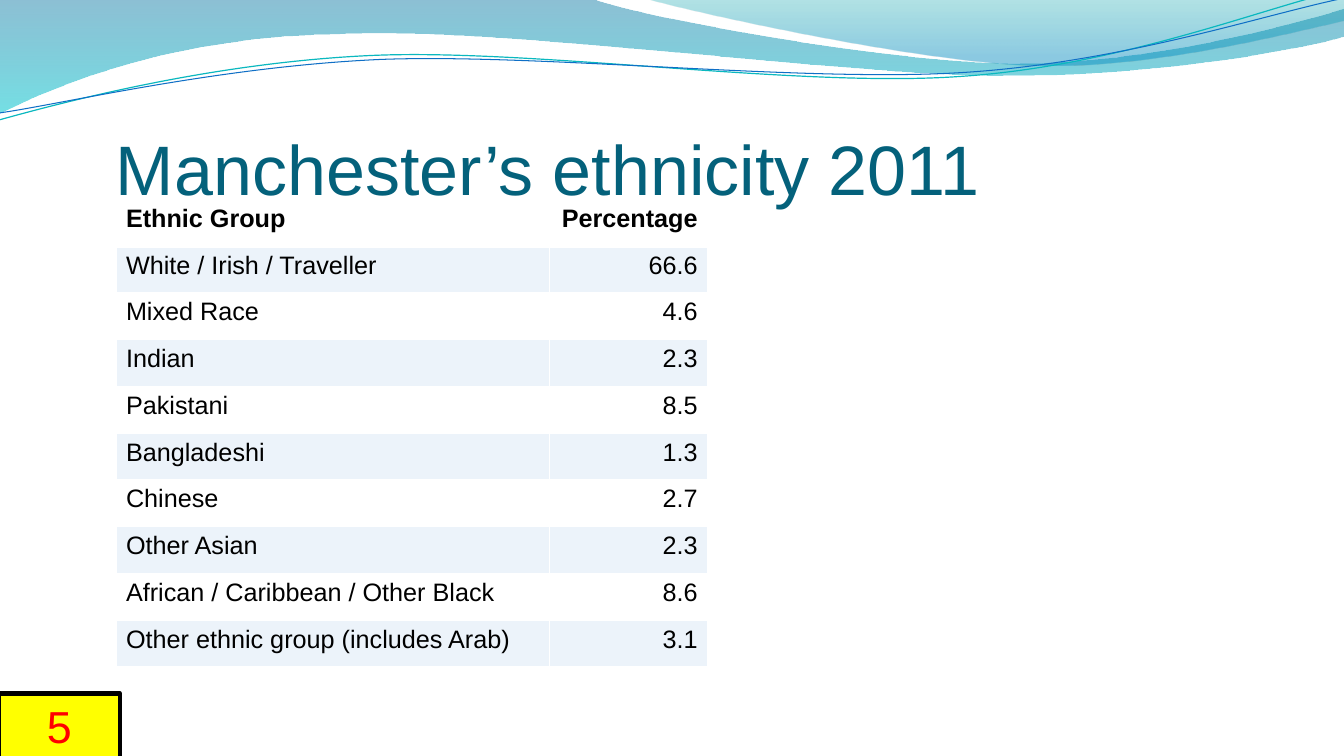
"""Build the slide on Manchester's ethnicity in 2011."""
from dataclasses import dataclass

from lxml.etree import SubElement
from pptx import Presentation
from pptx.dml.color import RGBColor
from pptx.enum.shapes import MSO_SHAPE as Shape
from pptx.enum.text import MSO_ANCHOR as Anchor, MSO_AUTO_SIZE as AutoSize, PP_ALIGN as Align
from pptx.oxml import parse_xml
from pptx.oxml.ns import nsdecls, qn
from pptx.util import Pt

PX = 9144
FONT = "Arial"
BLACK = RGBColor(0x00, 0x00, 0x00)
WHITE = RGBColor(0xFF, 0xFF, 0xFF)
RED = RGBColor(0xFF, 0x00, 0x00)
YELLOW = RGBColor(0xFF, 0xFF, 0x00)
TITLE_TEAL = RGBColor(0x04, 0x61, 0x7B)
BAND_BLUE = RGBColor(0x0F, 0x6F, 0xC6)
LINE_TEAL = RGBColor(0x0A, 0xB8, 0xBF)
DEEP_BLUE = RGBColor(0x00, 0x74, 0xA1)
TURQUOISE = RGBColor(0x00, 0xC6, 0xCF)
SEA_GREEN = RGBColor(0x00, 0xA1, 0xA9)
SKY_BLUE = RGBColor(0x00, 0x8B, 0xBF)

Point = tuple[int, int]


@dataclass(frozen=True)
class Stop:
    position: float
    color: RGBColor
    alpha: int


@dataclass(frozen=True)
class Wave:
    """A path whose segments hold one end point or three cubic curve points."""
    start: Point
    segments: list[list[Point]]
    stops: tuple[Stop, ...] = ()
    line: RGBColor | None = None
    weight: float = 0


WAVES = [
    Wave((0, 0), [
        [(587, -1)],
        [(634, 17), (885, 63), (1011, 63)],
        [(1138, 63), (1278, 26), (1333, 9)],
        [(1335, 36)],
        [(1311, 44), (1160, 76), (994, 75)],
        [(829, 75), (509, 28), (343, 34)],
        [(172, 36), (61, 83), (-1, 113)],
    ], stops=(Stop(0, DEEP_BLUE, 45), Stop(1, TURQUOISE, 55))),
    Wave((639, -1), [
        [(679, 11), (909, 62), (1025, 65)],
        [(1141, 69), (1282, 32), (1333, 21)],
        [(1333, 0)],
    ], stops=(Stop(0, SEA_GREEN, 30), Stop(0.8, SKY_BLUE, 45))),
    Wave((-1, 119), [
        [(64, 101), (211, 62), (369, 55)],
        [(527, 48), (790, 87), (950, 76)],
        [(1110, 66), (1252, 8), (1331, -10)],
    ], line=LINE_TEAL, weight=0.85),
    Wave((0, 112), [
        [(63, 103), (218, 66), (378, 59)],
        [(537, 53), (796, 82), (955, 72)],
        [(1115, 62), (1255, 14), (1334, -2)],
    ], line=BAND_BLUE, weight=0.75),
]

ROWS = [
    ("Ethnic Group", "Percentage"),
    ("White / Irish / Traveller", "66.6"),
    ("Mixed Race", "4.6"),
    ("Indian", "2.3"),
    ("Pakistani", "8.5"),
    ("Bangladeshi", "1.3"),
    ("Chinese", "2.7"),
    ("Other Asian", "2.3"),
    ("African / Caribbean / Other Black", "8.6"),
    ("Other ethnic group (includes Arab)", "3.1"),
]
COLUMN_WIDTHS = (430, 157)


def box(*lengths: int) -> list[int]:
    return [n * PX for n in lengths]


def set_alpha(color_element, percent: int) -> None:
    SubElement(color_element, qn("a:alpha")).set("val", str(percent * 1000))


def style(p, size: int, color: RGBColor, align: Align = Align.LEFT, bold: bool = False) -> None:
    p.alignment = align
    p.font.name, p.font.size, p.font.bold = FONT, Pt(size), bold
    p.font.color.rgb = color


def bend(sp, segments: list[list[Point]]) -> None:
    """Turn each run of three straight steps into one cubic curve."""
    steps = iter(list(sp.element.iter(qn("a:lnTo"))))
    for segment in segments:
        group = [next(steps) for _ in segment]
        if len(group) == 3:
            cubic = parse_xml(f'<a:cubicBezTo {nsdecls("a")}/>')
            group[0].addprevious(cubic)
            for step in group:
                cubic.append(step[0])
                step.getparent().remove(step)


def draw_wave(slide, wave: Wave) -> None:
    points = [point for segment in wave.segments for point in segment]
    builder = slide.shapes.build_freeform(*wave.start, scale=PX)
    builder.add_line_segments(points, close=bool(wave.stops))
    sp = builder.convert_to_shape()
    bend(sp, wave.segments)
    sp.shadow.inherit = False
    if wave.stops:
        sp.fill.gradient()
        sp.fill.gradient_angle = 270
        for target, stop in zip(sp.fill.gradient_stops, wave.stops):
            target.position = stop.position
            target.color.rgb = stop.color
        for element, stop in zip(sp.element.iter(qn("a:srgbClr")), wave.stops):
            set_alpha(element, stop.alpha)
        sp.line.fill.background()
    else:
        sp.fill.background()
        sp.line.color.rgb = wave.line
        sp.line.width = Pt(wave.weight)


def add_borders(tc_pr, bottom: int) -> None:
    for i, (side, width) in enumerate((("L", 1), ("R", 1), ("T", 1), ("B", bottom))):
        tc_pr.insert(i, parse_xml(
            f'<a:ln{side} {nsdecls("a")} w="{Pt(width)}"><a:solidFill>'
            f'<a:srgbClr val="{WHITE}"/></a:solidFill></a:ln{side}>'))


def draw_table(slide) -> None:
    frame = slide.shapes.add_table(len(ROWS), len(COLUMN_WIDTHS),
                                   *box(115, 198, sum(COLUMN_WIDTHS), 464))
    table = frame.table
    table.first_row = table.horz_banding = False
    for column, width in zip(table.columns, COLUMN_WIDTHS):
        column.width = width * PX
    for r, row in enumerate(ROWS):
        for c, text in enumerate(row):
            cell = table.cell(r, c)
            cell.text = text
            style(cell.text_frame.paragraphs[0], 18, BLACK,
                  Align.RIGHT if c else Align.LEFT, bold=r == 0)
            if r % 2:
                cell.fill.solid()
                cell.fill.fore_color.rgb = BAND_BLUE
            else:
                cell.fill.background()
            tc_pr = cell._tc.get_or_add_tcPr()
            for element in tc_pr.iter(qn("a:srgbClr")):
                set_alpha(element, 8)
            add_borders(tc_pr, bottom=1 if r else 3)


def draw_title(slide) -> None:
    title = slide.shapes.title
    title.element.getparent().append(title.element)
    title.left, title.top, title.width, title.height = box(115, 83, 1102, 125)
    tf = title.text_frame
    tf.text = "Manchester’s ethnicity 2011"
    tf.auto_size = AutoSize.NONE
    tf.vertical_anchor = Anchor.BOTTOM
    tf.margin_left = tf.margin_right = tf.margin_bottom = 0
    tf.margin_top = 5 * PX
    style(tf.paragraphs[0], 50, TITLE_TEAL)


def draw_number(slide) -> None:
    sp = slide.shapes.add_shape(Shape.RECTANGLE, *box(-1, 688, 120, 64))
    sp.shadow.inherit = False
    sp.fill.solid()
    sp.fill.fore_color.rgb = YELLOW
    sp.line.color.rgb = BLACK
    sp.line.width = Pt(3)
    tf = sp.text_frame
    tf.text = "5"
    tf.vertical_anchor = Anchor.TOP
    tf.auto_size = AutoSize.SHAPE_TO_FIT_TEXT
    style(tf.paragraphs[0], 32, RED, Align.CENTER)


def main() -> None:
    prs = Presentation()
    prs.slide_width, prs.slide_height = box(1333, 750)
    slide = prs.slides.add_slide(prs.slide_layouts[5])
    for wave in WAVES:
        draw_wave(slide, wave)
    draw_title(slide)
    draw_table(slide)
    draw_number(slide)
    prs.save("out.pptx")


if __name__ == "__main__":
    main()
